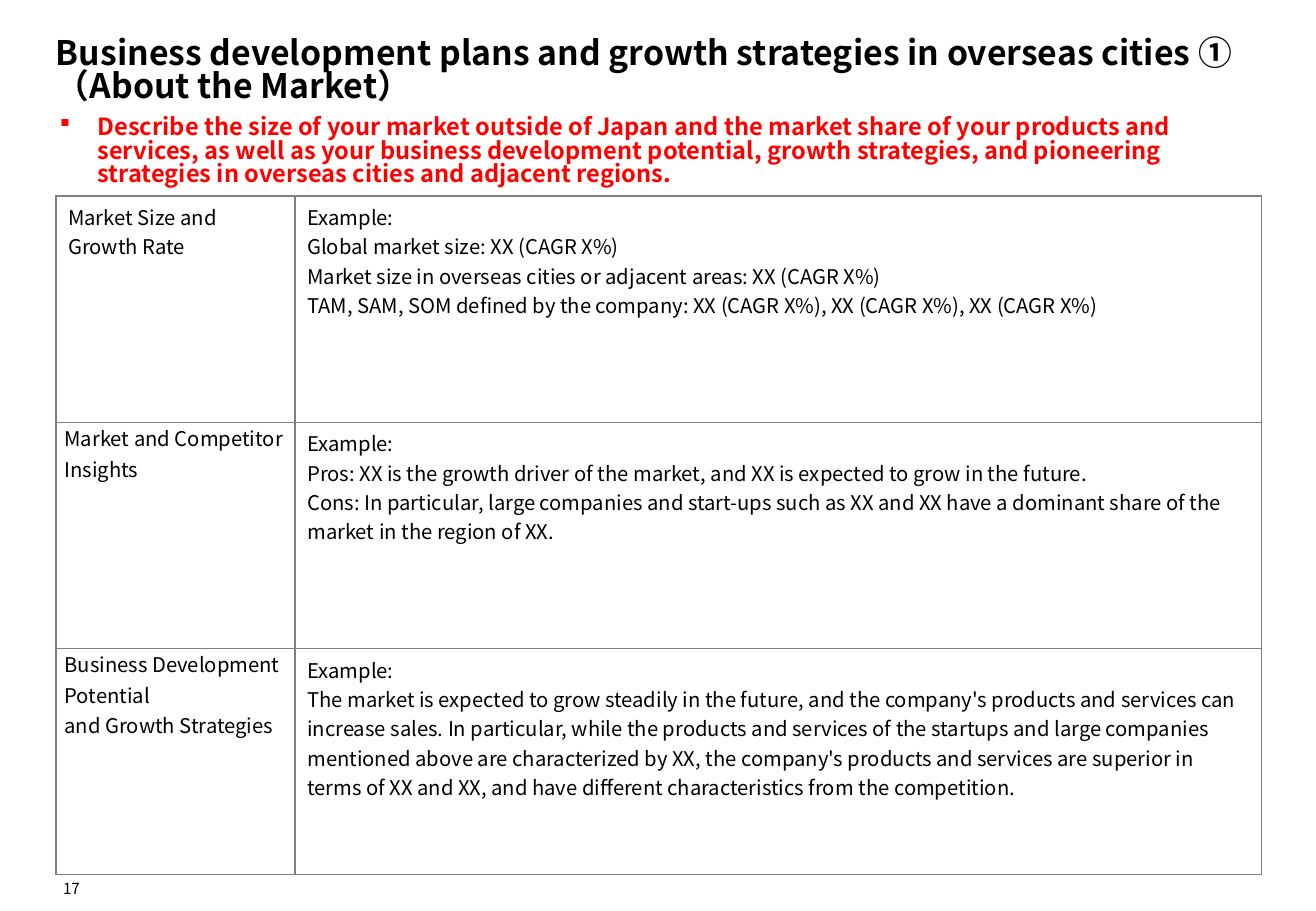
import pptx
import pptx.util
import pptx.dml.color
import pptx.enum.text
import pptx.oxml
import pptx.oxml.ns
from dataclasses import dataclass
from lxml import etree

Cm, Pt = pptx.util.Cm, pptx.util.Pt
Align = pptx.enum.text.PP_ALIGN
Anchor = pptx.enum.text.MSO_ANCHOR
qn = pptx.oxml.ns.qn


@dataclass(frozen=True)
class Theme:
    font: str = "Noto Sans CJK JP"
    ink: str = "000000"
    accent: str = "FF0000"
    paper: str = "FFFFFF"
    rule: str = "808080"
    title_size: int = 20
    lead_size: int = 14
    body_size: int = 12
    number_size: int = 9
    tight: float = 0.82


class SlideWriter:
    def __init__(self, page, theme):
        self.page = page
        self.theme = theme

    def style(self, para, size, color, bold=False):
        font = para.font
        font.size = Pt(size)
        font.bold = bold
        font.color.rgb = pptx.dml.color.RGBColor.from_string(color)
        font.name = self.theme.font
        properties = para._p.get_or_add_pPr().find(qn("a:defRPr"))
        etree.SubElement(properties, qn("a:ea"), typeface=self.theme.font)

    def indent(self, para, distance):
        properties = para._p.get_or_add_pPr()
        properties.set("marL", str(Cm(distance)))
        properties.set("indent", str(-Cm(distance)))

    def text(self, place, words, size, color, bold=False, anchor=Anchor.BOTTOM,
             inset=0, wrap=True, align=Align.LEFT, spacing=None, bullet=False):
        box = self.page.shapes.add_textbox(*map(Cm, place))
        frame = box.text_frame
        frame.word_wrap = wrap
        frame.vertical_anchor = anchor
        frame.margin_left = frame.margin_right = Cm(inset)
        frame.margin_top = frame.margin_bottom = Cm(inset)
        para = frame.paragraphs[0]
        para.text = words
        para.alignment = align
        if spacing:
            para.line_spacing = spacing
        if bullet:
            self.indent(para, 0.79)
            properties = para._p.get_or_add_pPr()
            etree.SubElement(properties, qn("a:buFont"), typeface="Wingdings")
            etree.SubElement(properties, qn("a:buChar"), char="§")
        self.style(para, size, color, bold)

    def border(self, cell):
        properties = cell._tc.get_or_add_tcPr()
        for index, side in enumerate(("lnL", "lnR", "lnT", "lnB")):
            line = etree.Element(qn(f"a:{side}"), w=str(Pt(1)))
            fill = etree.SubElement(line, qn("a:solidFill"))
            etree.SubElement(fill, qn("a:srgbClr"), val=self.theme.rule)
            properties.insert(index, line)

    def cell(self, cell, lines, compact=False, hanging=0):
        cell.fill.solid()
        cell.fill.fore_color.rgb = pptx.dml.color.RGBColor.from_string(self.theme.paper)
        self.border(cell)
        if compact:
            cell.margin_left = cell.margin_right = Cm(0.18)
            cell.margin_top = cell.margin_bottom = 0
        cell.text = "\n".join(lines)
        for index, para in enumerate(cell.text_frame.paragraphs):
            if compact:
                para.alignment = Align.JUSTIFY
                para.line_spacing = Pt(18)
            if index < hanging:
                self.indent(para, 0.38)
            self.style(para, self.theme.body_size, self.theme.ink)

    def table(self, left, top, widths, row_height, rows):
        table = self.page.shapes.add_table(
            len(rows), len(widths), Cm(left), Cm(top),
            Cm(sum(widths)), Cm(row_height * len(rows))).table
        table.first_row = table.horz_banding = False
        for column, width in zip(table.columns, widths):
            column.width = Cm(width)
        for index, (heading, hanging, example) in enumerate(rows):
            table.rows[index].height = Cm(row_height)
            self.cell(table.cell(index, 0), heading, index > 0, hanging)
            self.cell(table.cell(index, 1), ["Example:"] + example)


# Each row: heading lines, number of hanging lines, example lines
MARKET_ROWS = [
    (["Market Size and Growth Rate"], 0, [
        "Global market size: XX (CAGR X%)",
        "Market size in overseas cities or adjacent areas: XX (CAGR X%)",
        "TAM, SAM, SOM defined by the company: XX (CAGR X%), XX (CAGR X%), XX (CAGR X%)",
    ]),
    (["Market and Competitor", "Insights"], 1, [
        "Pros: XX is the growth driver of the market, and XX is expected to grow in the future.",
        "Cons: In particular, large companies and start-ups such as XX and XX have a dominant "
        "share of the market in the region of XX.",
    ]),
    (["Business Development", "Potential", "and Growth Strategies"], 3, [
        "The market is expected to grow steadily in the future, and the company's products and "
        "services can increase sales. In particular, while the products and services of the "
        "startups and large companies mentioned above are characterized by XX, the company's "
        "products and services are superior in terms of XX and XX, and have different "
        "characteristics from the competition.",
    ]),
]


def main():
    deck = pptx.Presentation()
    deck.slide_width, deck.slide_height = Cm(27.51), Cm(19.05)
    theme = Theme()
    writer = SlideWriter(deck.slides.add_slide(deck.slide_layouts[6]), theme)

    # Page number
    writer.text((1.17, 18.29, 0.5, 0.48), "17", theme.number_size, theme.ink,
                wrap=False, align=Align.RIGHT)

    # Title and instruction
    writer.text((1.17, 0.5, 25.2, 1.7),
                "Business development plans and growth strategies in overseas cities ①"
                "\v（About the Market）",
                theme.title_size, theme.ink, bold=True, spacing=theme.tight)
    writer.text((1.15, 2.24, 25.2, 1.88),
                "Describe the size of your market outside of Japan and the market share of your "
                "products and services, as well as your business development potential, growth "
                "strategies, and pioneering strategies in overseas cities and adjacent regions.",
                theme.lead_size, theme.accent, bold=True, anchor=Anchor.MIDDLE,
                inset=0.1, spacing=theme.tight, bullet=True)

    # Market table
    writer.table(1.17, 4.1, (5, 20.2), 4.73, MARKET_ROWS)

    deck.save("out.pptx")


if __name__ == "__main__":
    main()
